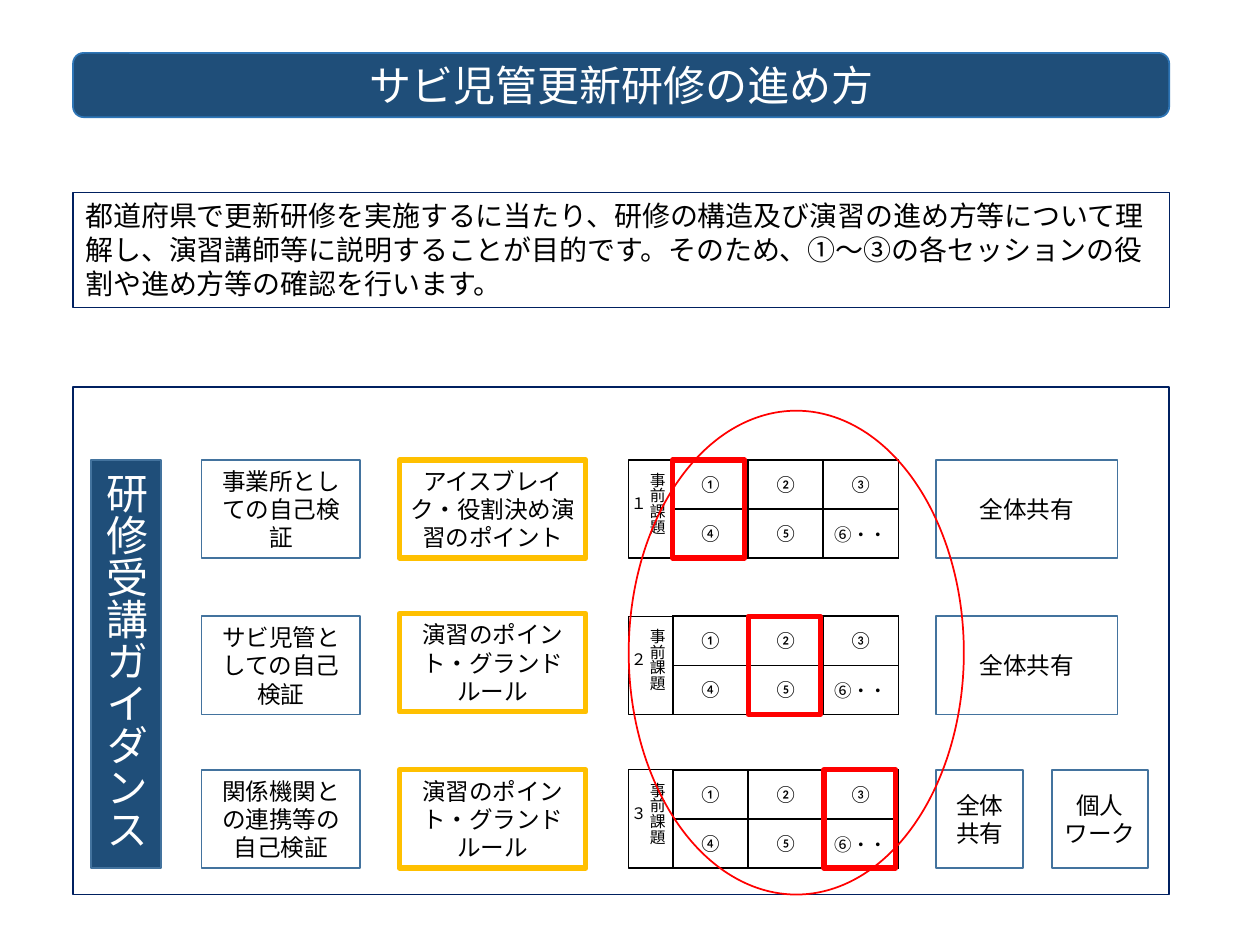
from lxml import etree
from pptx import Presentation
from pptx.dml.color import RGBColor
from pptx.enum.shapes import MSO_SHAPE
from pptx.enum.text import MSO_ANCHOR, PP_ALIGN
from pptx.oxml.ns import qn
from pptx.util import Inches, Pt

RECT, ROUND, OVAL = MSO_SHAPE.RECTANGLE, MSO_SHAPE.ROUNDED_RECTANGLE, MSO_SHAPE.OVAL
TOP, MID = MSO_ANCHOR.TOP, MSO_ANCHOR.MIDDLE
LEFT, CENTER = PP_ALIGN.LEFT, PP_ALIGN.CENTER

FONT = "Calibri"
NAVY, BLUE, STEEL, INK = "1F4E79", "2E75B6", "43739E", "002060"
GOLD, RED, BLACK, WHITE = "FFC000", "FF0000", "000000", "FFFFFF"

# Grid: left edge and width of each column, top of each row
EDGE, WIDE = 0.58, 8.7
GUIDE, CHECK, POINT = (0.72, 0.56), (1.6, 1.26), (3.17, 1.48)
TASK, CASES, SHARE = (4.99, 0.35), (5.34, 1.79), (7.43, 1.44)
HALF, SOLO = (7.43, 0.69), (8.35, 0.76)
ROWS = (3.65, 4.89, 6.11)
HIGH = 0.78
CELL = 0.6

CHECKS = ("事業所としての自己検証", "サビ児管としての自己検証", "関係機関との連携等の自己検証")
POINTS = ("アイスブレイク・役割決め演習のポイント",) + ("演習のポイント・グランドルール",) * 2
SHARES = (
    ((SHARE, "全体共有"),),
    ((SHARE, "全体共有"),),
    ((HALF, "全体\n共有"), (SOLO, "個人ワーク")),
)
MARKS = (("①", "②", "③"), ("④", "⑤", "⑥・・"))
INTRO = ("都道府県で更新研修を実施するに当たり、研修の構造及び演習の進め方等について"
         "理解し、演習講師等に説明することが目的です。そのため、①～③の各セッションの"
         "役割や進め方等の確認を行います。")


def color(code):
    return RGBColor.from_string(code)


def write(frame, text, size, ink=BLACK, align=CENTER):
    frame.text = text
    for para in frame.paragraphs:
        para.alignment = align
        style = {"name": FONT, "size": Pt(size)}
        for run in para.runs:
            for key, value in style.items():
                setattr(run.font, key, value)
            run.font.color.rgb = color(ink)


def box(slide, col, top, high, line, width=1, kind=RECT, fill=None):
    left, wide = col
    shape = slide.shapes.add_shape(
        kind, Inches(left), Inches(top), Inches(wide), Inches(high))
    shape.shadow.inherit = False
    if fill:
        shape.fill.solid()
        shape.fill.fore_color.rgb = color(fill)
    else:
        shape.fill.background()
    shape.line.color.rgb = color(line)
    shape.line.width = Pt(width)
    return shape


def label(shape, text, size=13.5, ink=BLACK, align=CENTER, anchor=MID,
          tall=False, inset=0.1):
    frame = shape.text_frame
    style = {"word_wrap": True, "vertical_anchor": anchor,
             "margin_left": Inches(inset), "margin_right": Inches(inset)}
    for key, value in style.items():
        setattr(frame, key, value)
    if tall:
        frame._txBody.bodyPr.set("vert", "eaVert")
    write(frame, text, size, ink, align)


def border(cell):
    props = cell._tc.get_or_add_tcPr()
    for spot, side in enumerate(("lnL", "lnR", "lnT", "lnB")):
        line = etree.Element(qn("a:" + side), w=str(Pt(1)))
        fill = etree.SubElement(line, qn("a:solidFill"))
        etree.SubElement(fill, qn("a:srgbClr"), val=BLACK)
        props.insert(spot, line)


def table(slide, top):
    left, wide = CASES
    grid = slide.shapes.add_table(
        len(MARKS), len(MARKS[0]), Inches(left), Inches(top),
        Inches(wide), Inches(HIGH)).table
    grid.first_row = grid.horz_banding = False
    style = {"margin_left": Inches(0.07), "margin_right": Inches(0.07),
             "margin_top": Inches(0.04), "margin_bottom": Inches(0.04),
             "vertical_anchor": MID}
    for r, marks in enumerate(MARKS):
        for c, mark in enumerate(marks):
            cell = grid.cell(r, c)
            for key, value in style.items():
                setattr(cell, key, value)
            cell.fill.background()
            border(cell)
            write(cell.text_frame, mark, 10)


def session(slide, index):
    top = ROWS[index]
    label(box(slide, CHECK, top, HIGH, STEEL), CHECKS[index])
    # Narrow insets give the points seven characters a line
    lift = 0.02 if index == 1 else 0
    label(box(slide, POINT, top - lift, HIGH, GOLD, 3), POINTS[index], inset=0.07)
    label(box(slide, TASK, top, HIGH, BLACK, 0.75),
          "事前課題" + "１２３"[index], 9, anchor=TOP, tall=True)
    table(slide, top)
    for col, text in SHARES[index]:
        label(box(slide, col, top, HIGH, STEEL), text)
    # Column of cases taken up in this session
    box(slide, (CASES[0] + CELL * index, 0.57), top, HIGH, RED, 3)


def main():
    deck = Presentation()
    deck.slide_width, deck.slide_height = Inches(10), Inches(7.5)
    slide = deck.slides.add_slide(deck.slide_layouts[6])
    full = (EDGE, WIDE)

    # Title and aim
    label(box(slide, full, 0.42, 0.51, BLUE, kind=ROUND, fill=NAVY),
          "サビ児管更新研修の進め方", 24, WHITE)
    label(box(slide, full, 1.53, 0.91, INK, 0.75), INTRO, 16, align=LEFT, anchor=TOP)

    # Frame and guidance bar
    box(slide, full, 3.07, 4.03, INK)
    label(box(slide, GUIDE, ROWS[0], ROWS[-1] + HIGH - ROWS[0], STEEL, fill=NAVY),
          "研修受講ガイダンス", 24, WHITE, tall=True)

    # Three sessions, then the ring around their cases
    for index in range(len(ROWS)):
        session(slide, index)
    box(slide, (TASK[0], 2.66), 3.26, 3.84, RED, kind=OVAL)

    deck.save("out.pptx")


if __name__ == "__main__":
    main()
